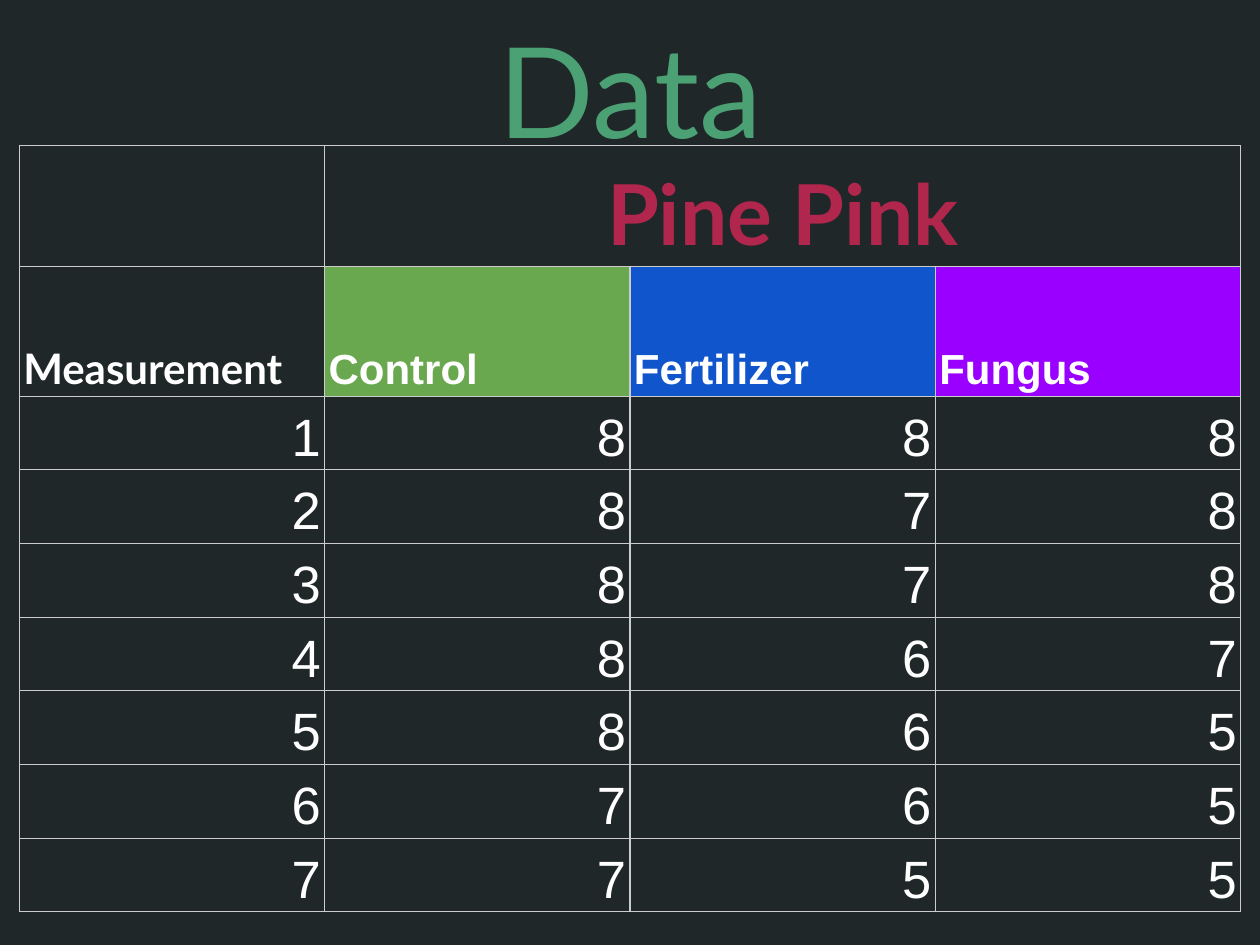
from dataclasses import dataclass

from lxml import etree
from pptx import Presentation
from pptx.dml.color import RGBColor
from pptx.enum import text
from pptx.oxml import ns
from pptx.util import Cm, Pt


@dataclass(frozen=True)
class Theme:
    """Colours, fonts and type sizes of the slide."""
    background: str = "202729"
    title: str = "4BA173"
    group: str = "B1264C"
    text: str = "FFFFFF"
    border: str = "CCCCCC"
    control: str = "6AA84F"
    fertilizer: str = "1155CC"
    fungus: str = "9900FF"
    display_font: str = "Lato"
    data_font: str = "Arial"
    title_size: int = 72
    group_size: int = 48
    header_size: int = 24
    data_size: int = 30
    border_width: float = 0.75


THEME = Theme()
HEADERS = [
    ("Measurement", THEME.display_font, None),
    ("Control", THEME.data_font, THEME.control),
    ("Fertilizer", THEME.data_font, THEME.fertilizer),
    ("Fungus", THEME.data_font, THEME.fungus),
]
MEASUREMENTS = [
    (1, 8, 8, 8),
    (2, 8, 7, 8),
    (3, 8, 7, 8),
    (4, 8, 6, 7),
    (5, 8, 6, 5),
    (6, 7, 6, 5),
    (7, 7, 5, 5),
]
GROUP_HEIGHT, HEADER_HEIGHT = 2.42, 2.62


def style_font(font, name, size, color, bold=False):
    """Apply one typeface, size, colour and weight."""
    font.name = name
    font.size = Pt(size)
    font.bold = bold
    font.color.rgb = RGBColor.from_string(color)


def style_cell(cell, fill=None):
    """Give a cell its borders, margins, anchor and fill."""
    properties = cell._tc.get_or_add_tcPr()
    for side in ("lnL", "lnR", "lnT", "lnB"):
        line = etree.SubElement(properties, ns.qn(f"a:{side}"), w=str(Pt(THEME.border_width)))
        solid = etree.SubElement(line, ns.qn("a:solidFill"))
        etree.SubElement(solid, ns.qn("a:srgbClr"), val=THEME.border)
    cell.margin_left = cell.margin_right = Cm(0.08)
    cell.margin_top = cell.margin_bottom = Cm(0.05)
    cell.vertical_anchor = text.MSO_ANCHOR.BOTTOM
    if fill:
        cell.fill.solid()
        cell.fill.fore_color.rgb = RGBColor.from_string(fill)
    else:
        cell.fill.background()


def write_cell(cell, content, alignment, name, size, color, bold):
    """Write one formatted paragraph into a cell."""
    paragraph = cell.text_frame.paragraphs[0]
    paragraph.text = str(content)
    paragraph.alignment = alignment
    paragraph.line_spacing = 1.15
    style_font(paragraph.font, name, size, color, bold)


def place_title(slide, left, top, width, height):
    """Place the title placeholder in the given box."""
    title = slide.shapes.title
    title.left, title.top, title.width, title.height = map(Cm, (left, top, width, height))
    frame = title.text_frame
    frame.auto_size = text.MSO_AUTO_SIZE.NONE
    frame.word_wrap = True
    frame.vertical_anchor = text.MSO_ANCHOR.TOP
    frame.margin_left = frame.margin_right = Cm(0.25)
    frame.margin_top = frame.margin_bottom = Cm(0.25)
    paragraph = frame.paragraphs[0]
    paragraph.text = "Data"
    paragraph.alignment = text.PP_ALIGN.CENTER
    style_font(paragraph.font, THEME.display_font, THEME.title_size, THEME.title)


def place_table(slide, left, top, width, height):
    """Place the measurement table in the given box."""
    row_count, column_count = len(MEASUREMENTS) + 2, len(HEADERS)
    table = slide.shapes.add_table(
        row_count, column_count, Cm(left), Cm(top), Cm(width), Cm(height)).table
    table.first_row = table.horz_banding = False
    for column in table.columns:
        column.width = Cm(width / column_count)
    data_height = (height - GROUP_HEIGHT - HEADER_HEIGHT) / len(MEASUREMENTS)
    heights = [GROUP_HEIGHT, HEADER_HEIGHT] + [data_height] * len(MEASUREMENTS)
    for row, row_height in zip(table.rows, heights):
        row.height = Cm(row_height)

    for column in range(column_count):
        style_cell(table.cell(0, column))
    table.cell(0, 1).merge(table.cell(0, column_count - 1))
    write_cell(table.cell(0, 1), "Pine Pink", text.PP_ALIGN.CENTER,
               THEME.display_font, THEME.group_size, THEME.group, True)
    for column, (label, font_name, fill) in enumerate(HEADERS):
        cell = table.cell(1, column)
        style_cell(cell, fill)
        write_cell(cell, label, text.PP_ALIGN.LEFT,
                   font_name, THEME.header_size, THEME.text, True)
    for row, values in enumerate(MEASUREMENTS, start=2):
        for column, value in enumerate(values):
            cell = table.cell(row, column)
            style_cell(cell)
            write_cell(cell, value, text.PP_ALIGN.RIGHT,
                       THEME.data_font, THEME.data_size, THEME.text, False)


def main():
    """Build and save the presentation."""
    presentation = Presentation()
    presentation.slide_width, presentation.slide_height = Cm(25.4), Cm(19.05)
    slide = presentation.slides.add_slide(presentation.slide_layouts[5])
    slide.background.fill.solid()
    slide.background.fill.fore_color.rgb = RGBColor.from_string(THEME.background)
    place_title(slide, 1.42, 0, 22.56, 2.72)
    place_table(slide, 0.39, 2.93, 24.62, 15.44)
    presentation.save("out.pptx")


if __name__ == "__main__":
    main()
